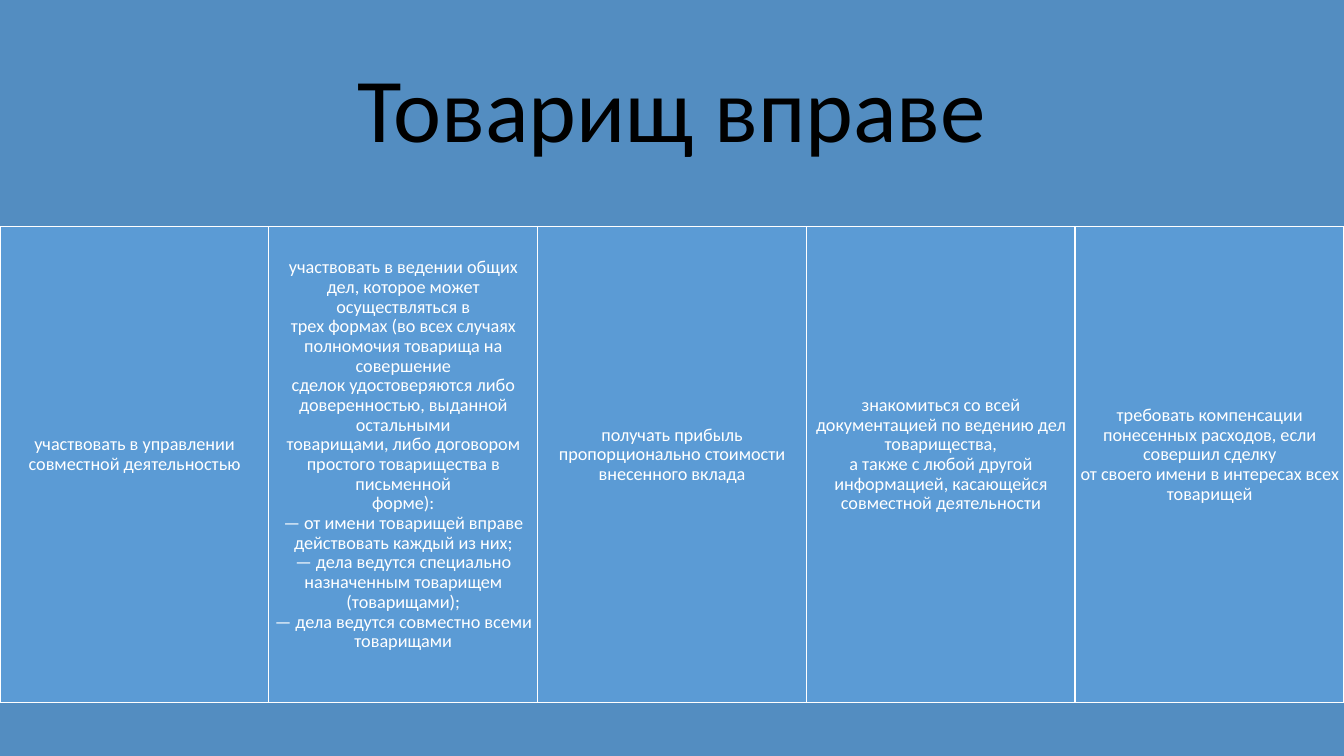
from dataclasses import dataclass
from pptx import Presentation
from pptx.dml.color import RGBColor
from pptx.enum.shapes import MSO_SHAPE
from pptx.enum.text import MSO_ANCHOR, MSO_AUTO_SIZE, PP_ALIGN
from pptx.util import Inches, Pt


@dataclass(frozen=True)
class Theme:
    font: str = "Calibri"
    band: str = "538DC1"
    panel: str = "5B9BD5"
    light: str = "FFFFFF"
    dark: str = "000000"
    head: int = 65
    body: int = 13


THEME = Theme()
WIDE, HIGH = Inches(13.33), Inches(7.5)
TOP, MID = 0.3, 0.63
TITLE = "Товарищ вправе"
RIGHTS = [
    "участвовать в управлении совместной деятельностью",
    "участвовать в ведении общих дел, которое может осуществляться в\n"
    "трех формах (во всех случаях полномочия товарища на совершение\n"
    "сделок удостоверяются либо доверенностью, выданной остальными\n"
    "товарищами, либо договором простого товарищества в письменной\n"
    "форме):\n"
    "— от имени товарищей вправе действовать каждый из них;\n"
    "— дела ведутся специально назначенным товарищем (товарищами);\n"
    "— дела ведутся совместно всеми товарищами",
    "получать прибыль пропорционально стоимости внесенного вклада",
    "знакомиться со всей документацией по ведению дел товарищества,\n"
    "а также с любой другой информацией, касающейся совместной деятельности",
    "требовать компенсации понесенных расходов, если совершил сделку\n"
    "от своего имени в интересах всех товарищей",
]


def paint(shape, color):
    shape.fill.solid()
    shape.fill.fore_color.rgb = RGBColor.from_string(color)


def write(shape, text, size, color, pad, foot):
    frame = shape.text_frame
    frame.text = text
    frame.word_wrap = True
    frame.auto_size = MSO_AUTO_SIZE.NONE
    frame.vertical_anchor = MSO_ANCHOR.MIDDLE
    frame.margin_left = frame.margin_right = frame.margin_top = Inches(pad)
    frame.margin_bottom = Inches(foot)
    for para in frame.paragraphs:
        para.alignment = PP_ALIGN.CENTER
        para.line_spacing = 0.9
        para.space_before = para.space_after = Pt(0)
        for run in para.runs:
            run.font.name = THEME.font
            run.font.size = Pt(size)
            run.font.color.rgb = RGBColor.from_string(color)


def add_box(slide, box, color):
    shape = slide.shapes.add_shape(MSO_SHAPE.RECTANGLE, *box)
    shape.shadow.inherit = False
    paint(shape, color)
    shape.line.fill.background()
    return shape


def add_head(slide, box):
    title = slide.shapes.title
    title.left, title.top, title.width, title.height = box
    paint(title, THEME.band)
    write(title, TITLE, THEME.head, THEME.dark, 0.27, 0.27)


def add_rights(slide, box):
    left, top, width, height = box
    step = width / len(RIGHTS)
    for col, text in enumerate(RIGHTS):
        cell = (int(left + col * step), top, int(step), height)
        panel = add_box(slide, cell, THEME.panel)
        panel.line.color.rgb = RGBColor.from_string(THEME.light)
        panel.line.width = Pt(1)
        write(panel, text, THEME.body, THEME.light, 0.05, 0.25)


def add_foot(slide, box):
    add_box(slide, box, THEME.band)


def main():
    deck = Presentation()
    deck.slide_width, deck.slide_height = WIDE, HIGH
    slide = deck.slides.add_slide(deck.slide_layouts[5])
    top, mid = int(HIGH * TOP), int(HIGH * MID)
    add_head(slide, (0, 0, WIDE, top))
    add_rights(slide, (0, top, WIDE, mid))
    add_foot(slide, (0, top + mid, WIDE, HIGH - top - mid))
    deck.save("out.pptx")


if __name__ == "__main__":
    main()
